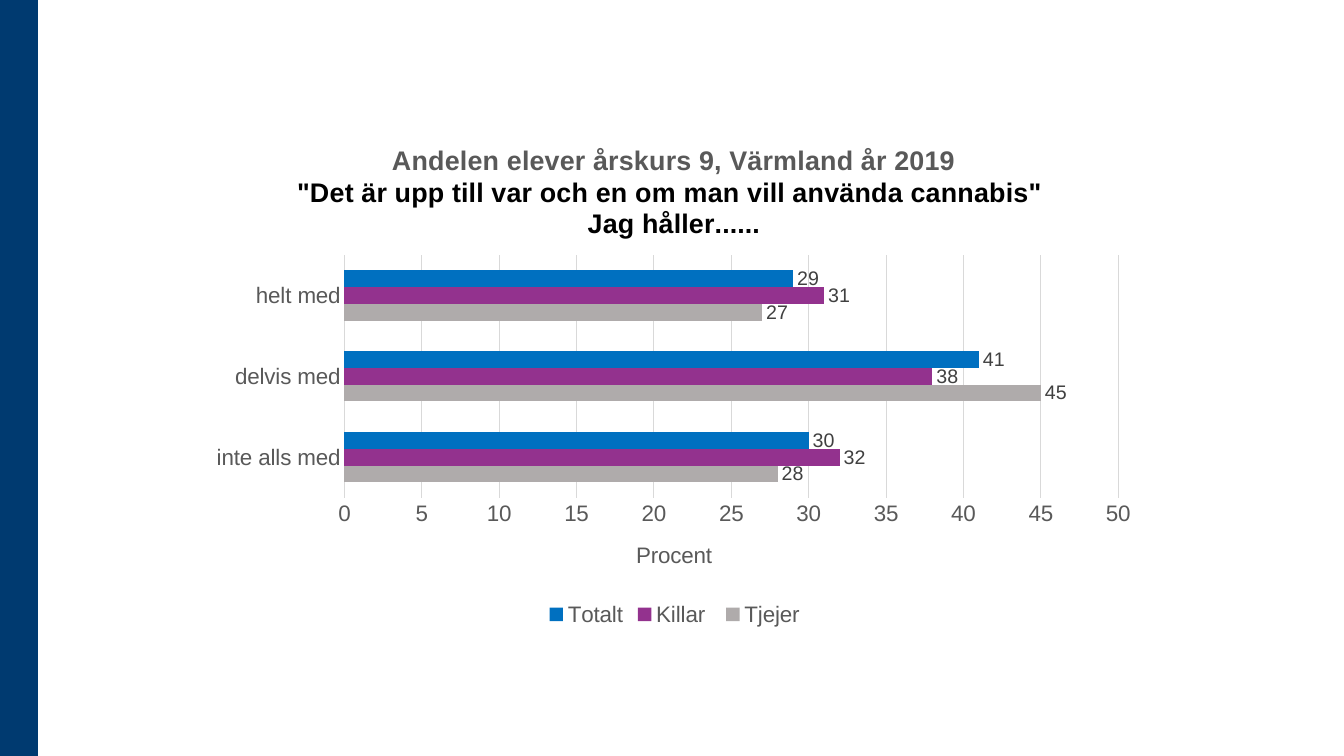
from dataclasses import dataclass

from lxml import etree
from pptx import Presentation
from pptx.chart.data import CategoryChartData
from pptx.dml.color import RGBColor
from pptx.enum.chart import (XL_CHART_TYPE, XL_LABEL_POSITION,
                             XL_LEGEND_POSITION, XL_TICK_MARK)
from pptx.enum.shapes import MSO_SHAPE
from pptx.oxml.ns import qn
from pptx.util import Emu, Pt

BAR_CLUSTERED = XL_CHART_TYPE.BAR_CLUSTERED
OUTSIDE_END = XL_LABEL_POSITION.OUTSIDE_END
BOTTOM = XL_LEGEND_POSITION.BOTTOM
NO_TICK = XL_TICK_MARK.NONE
RECTANGLE = MSO_SHAPE.RECTANGLE

PX = 9525  # EMU per px, at 96 px to the inch
CHART_LEFT, CHART_TOP, CHART_WIDTH, CHART_HEIGHT = 189, 119, 907, 482

NAVY = RGBColor(0x00, 0x3A, 0x70)
BLUE = RGBColor(0x00, 0x70, 0xC0)
PURPLE = RGBColor(0x93, 0x32, 0x8E)
GREY = RGBColor(0xAF, 0xAB, 0xAB)
GRID = RGBColor(0xD9, 0xD9, 0xD9)
TEXT = RGBColor(0x59, 0x59, 0x59)
LABEL = RGBColor(0x40, 0x40, 0x40)
BLACK = RGBColor(0x00, 0x00, 0x00)


@dataclass(frozen=True)
class Group:
    name: str
    values: tuple[int, ...]
    color: RGBColor


@dataclass(frozen=True)
class TitleLine:
    text: str
    color: RGBColor


CATEGORIES = ("inte alls med", "delvis med", "helt med")
GROUPS = (
    Group("Tjejer", (28, 45, 27), GREY),
    Group("Killar ", (32, 38, 31), PURPLE),
    Group("Totalt", (30, 41, 29), BLUE),
)
TITLE = (
    TitleLine("Andelen elever årskurs 9, Värmland år 2019", TEXT),
    TitleLine('"Det är upp till var och en om man vill använda cannabis" ', BLACK),
    TitleLine("Jag håller......", BLACK),
)


def set_font(font, size: float, color: RGBColor, bold: bool = False) -> None:
    for name, value in {"name": "Arial", "size": Pt(size), "bold": bold}.items():
        setattr(font, name, value)
    font.color.rgb = color


def set_line(line, color: RGBColor) -> None:
    line.color.rgb = color
    line.width = Pt(0.75)


def place(element, index: int, **lengths: int) -> None:
    """Give a chart part a manual layout, in px from the chart's corner."""
    for old in element.findall(qn("c:layout")):
        element.remove(old)
    layout = etree.Element(qn("c:layout"))
    manual = etree.SubElement(layout, qn("c:manualLayout"))
    settings = {"layoutTarget": "inner"} if "w" in lengths else {}
    settings |= {"xMode": "edge", "yMode": "edge"}
    for name, length in lengths.items():
        settings[name] = length / (CHART_WIDTH if name in "xw" else CHART_HEIGHT)
    for name, value in settings.items():
        etree.SubElement(manual, qn(f"c:{name}")).set("val", str(value))
    element.insert(index, layout)


def add_title(chart) -> None:
    title = chart.chart_title
    frame = title.text_frame
    for number, line in enumerate(TITLE):
        para = frame.add_paragraph() if number else frame.paragraphs[0]
        span = para.add_run()
        span.text = line.text
        set_font(span.font, 19.2, line.color, bold=True)
    title.include_in_layout = False
    place(title.element, 1, x=91, y=15)


def style_axes(chart) -> None:
    for axis in (chart.category_axis, chart.value_axis):
        axis.major_tick_mark = axis.minor_tick_mark = NO_TICK
        set_font(axis.tick_labels.font, 16, TEXT)
    set_line(chart.category_axis.format.line, GRID)

    percent = chart.value_axis
    scale = {"minimum_scale": 0, "maximum_scale": 50, "major_unit": 5}
    for name, value in scale.items():
        setattr(percent, name, value)
    percent.format.line.fill.background()
    set_line(percent.major_gridlines.format.line, GRID)
    percent.tick_labels.number_format = "0"
    percent.tick_labels.number_format_is_linked = False
    span = percent.axis_title.text_frame.paragraphs[0].add_run()
    span.text = "Procent"
    set_font(span.font, 16, TEXT)
    place(percent.axis_title.element, 1, x=413, y=392)


def style_bars(plot) -> None:
    plot.gap_width = 182
    plot.overlap = 0
    plot.vary_by_categories = False
    for series, group in zip(plot.series, GROUPS):
        series.format.fill.solid()
        series.format.fill.fore_color.rgb = group.color
        labels = series.data_labels
        settings = {"show_value": True, "position": OUTSIDE_END,
                    "number_format": "0", "number_format_is_linked": False}
        for name, value in settings.items():
            setattr(labels, name, value)
        set_font(labels.font, 14, LABEL)


def add_survey_chart(page) -> None:
    data = CategoryChartData(number_format="0")
    data.categories = CATEGORIES
    for group in GROUPS:
        data.add_series(group.name, group.values)
    box = (Emu(length * PX) for length in
           (CHART_LEFT, CHART_TOP, CHART_WIDTH, CHART_HEIGHT))
    chart = page.shapes.add_chart(BAR_CLUSTERED, *box, data).chart
    set_font(chart.font, 16, BLACK)
    add_title(chart)
    style_axes(chart)
    style_bars(chart.plots[0])
    chart.has_legend = True
    chart.legend.position = BOTTOM
    chart.legend.include_in_layout = False
    set_font(chart.legend.font, 16, TEXT)
    plot_area = chart.element.find(f".//{qn('c:plotArea')}")
    place(plot_area, 0, x=139, y=124, w=737, h=231)


def add_side_band(page, height: int) -> None:
    band = page.shapes.add_shape(RECTANGLE, 0, 0, Emu(36 * PX), height)
    band.shadow.inherit = False
    band.fill.solid()
    band.fill.fore_color.rgb = NAVY
    band.line.fill.background()


def main() -> None:
    deck = Presentation()
    deck.slide_width, deck.slide_height = Emu(1280 * PX), Emu(720 * PX)
    page = deck.slides.add_slide(deck.slide_layouts[6])
    add_side_band(page, deck.slide_height)
    add_survey_chart(page)
    deck.save("out.pptx")


if __name__ == "__main__":
    main()
